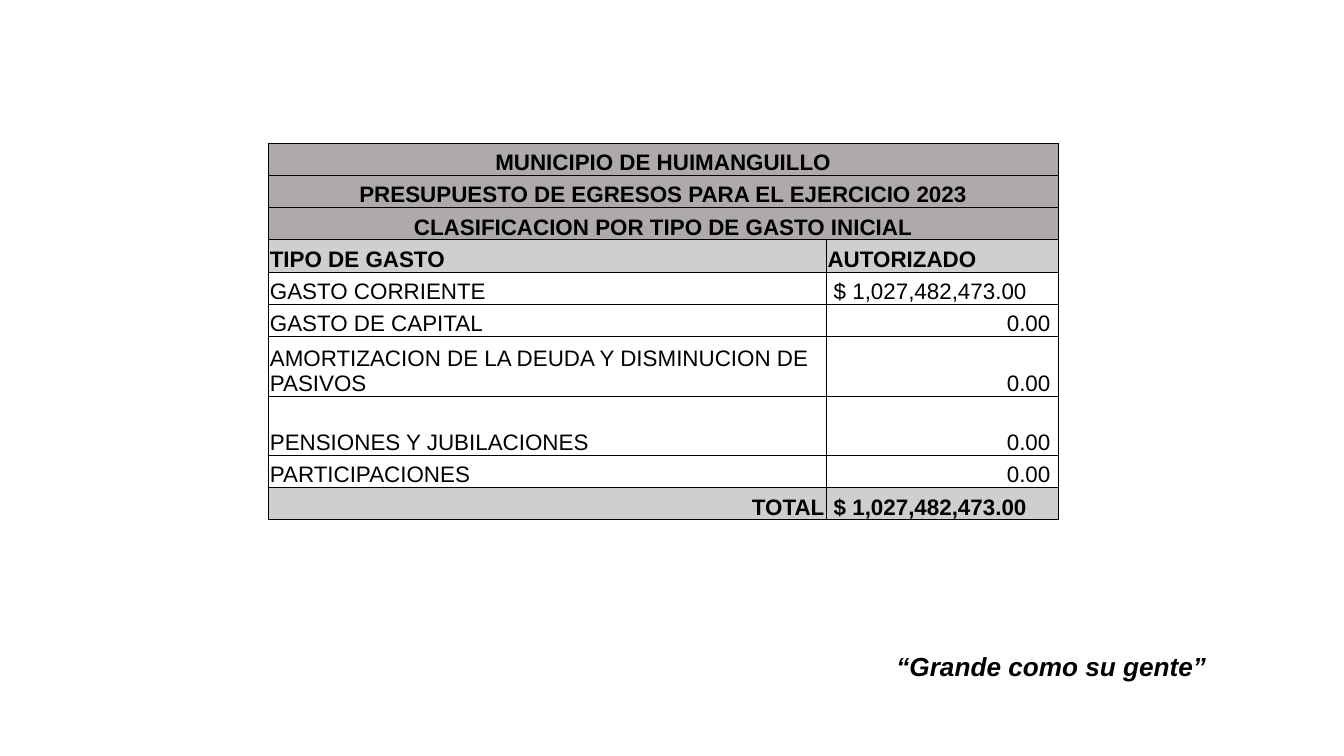
from lxml.etree import SubElement
from pptx import Presentation
from pptx.dml.color import RGBColor as Rgb
from pptx.enum.text import MSO_ANCHOR as Anchor, MSO_AUTO_SIZE as AutoSize, PP_ALIGN as Align
from pptx.oxml.ns import qn
from pptx.util import Cm, Pt

COLORS = {"text": "000000", "border": "000000", "title": "AEAAAA", "header": "D0CECE"}
FONT = "Arial"
TITLES = [
    "MUNICIPIO DE HUIMANGUILLO",
    "PRESUPUESTO DE EGRESOS PARA EL EJERCICIO 2023",
    "CLASIFICACION POR TIPO DE GASTO INICIAL",
]
HEADERS = ["TIPO DE GASTO", "AUTORIZADO"]
EXPENSES = [
    ("GASTO CORRIENTE", " $ 1,027,482,473.00"),
    ("GASTO DE CAPITAL", "0.00 "),
    ("AMORTIZACION DE LA DEUDA Y DISMINUCION DE PASIVOS", "0.00 "),
    ("PENSIONES Y JUBILACIONES", "0.00 "),
    ("PARTICIPACIONES", "0.00 "),
]
TOTAL = ("TOTAL", " $ 1,027,482,473.00")
COLUMN_SHARES = [0.706, 0.294]
ROW_WEIGHTS = [1] * 6 + [1.86, 1.84] + [1] * 2


def write_paragraph(para, text, size, align=Align.LEFT, bold=False, italic=False):
    """Fill a paragraph with text in the slide's font."""
    para.text = text
    para.alignment = align
    para.font.name = FONT
    para.font.size = Pt(size)
    para.font.bold = bold
    para.font.italic = italic
    para.font.color.rgb = Rgb.from_string(COLORS["text"])


def draw_borders(cell):
    """Give all four sides of a cell a thin solid line."""
    properties = cell._tc.get_or_add_tcPr()
    for side in ("a:lnL", "a:lnR", "a:lnT", "a:lnB"):
        line = SubElement(properties, qn(side), w=str(Pt(0.5)))
        fill = SubElement(line, qn("a:solidFill"))
        SubElement(fill, qn("a:srgbClr"), val=COLORS["border"])


def fill_cell(cell, text, align=Align.LEFT, bold=False, color=None):
    """Write a bottom-anchored cell with an optional background colour."""
    cell.margin_left = cell.margin_right = cell.margin_top = Cm(0.03)
    cell.margin_bottom = 0
    cell.vertical_anchor = Anchor.BOTTOM
    if color:
        cell.fill.solid()
        cell.fill.fore_color.rgb = Rgb.from_string(color)
    else:
        cell.fill.background()
    write_paragraph(cell.text_frame.paragraphs[0], text, 12, align, bold)


def add_budget_table(page, left, top, width, height):
    """Place the budget table in the given box."""
    frame = page.shapes.add_table(len(ROW_WEIGHTS), 2, left, top, width, height)
    table = frame.table
    table.first_row = table.horz_banding = False
    for column, share in zip(table.columns, COLUMN_SHARES):
        column.width = int(width * share)
    for row, weight in zip(table.rows, ROW_WEIGHTS):
        row.height = int(height * weight / sum(ROW_WEIGHTS))
    for cell in table.iter_cells():
        draw_borders(cell)

    for index, title in enumerate(TITLES):
        cell = table.cell(index, 0)
        cell.merge(table.cell(index, 1))
        fill_cell(cell, title, Align.CENTER, True, COLORS["title"])
    header_row = len(TITLES)
    for index, header in enumerate(HEADERS):
        fill_cell(table.cell(header_row, index), header, bold=True, color=COLORS["header"])
    for index, (expense, amount) in enumerate(EXPENSES, header_row + 1):
        fill_cell(table.cell(index, 0), expense)
        align = Align.LEFT if "$" in amount else Align.RIGHT
        fill_cell(table.cell(index, 1), amount, align)
    total_row = len(ROW_WEIGHTS) - 1
    for index, align in enumerate((Align.RIGHT, Align.LEFT)):
        fill_cell(table.cell(total_row, index), TOTAL[index], align, True, COLORS["header"])


def add_slogan(page, left, top, width, height):
    """Place the right-aligned slogan in the given box."""
    box = page.shapes.add_textbox(left, top, width, height)
    box.text_frame.word_wrap = True
    box.text_frame.auto_size = AutoSize.SHAPE_TO_FIT_TEXT
    write_paragraph(box.text_frame.paragraphs[0], "“Grande como su gente” ", 14,
                    Align.RIGHT, bold=True, italic=True)


def main():
    """Build the budget slide and save the deck."""
    deck = Presentation()
    deck.slide_width, deck.slide_height = Cm(25.4), Cm(14.29)
    page = deck.slides.add_slide(deck.slide_layouts[6])
    add_budget_table(page, Cm(5.07), Cm(2.71), Cm(14.93), Cm(7.12))
    add_slogan(page, Cm(16), Cm(12.17), Cm(7.19), Cm(0.86))
    deck.save("out.pptx")


if __name__ == "__main__":
    main()
